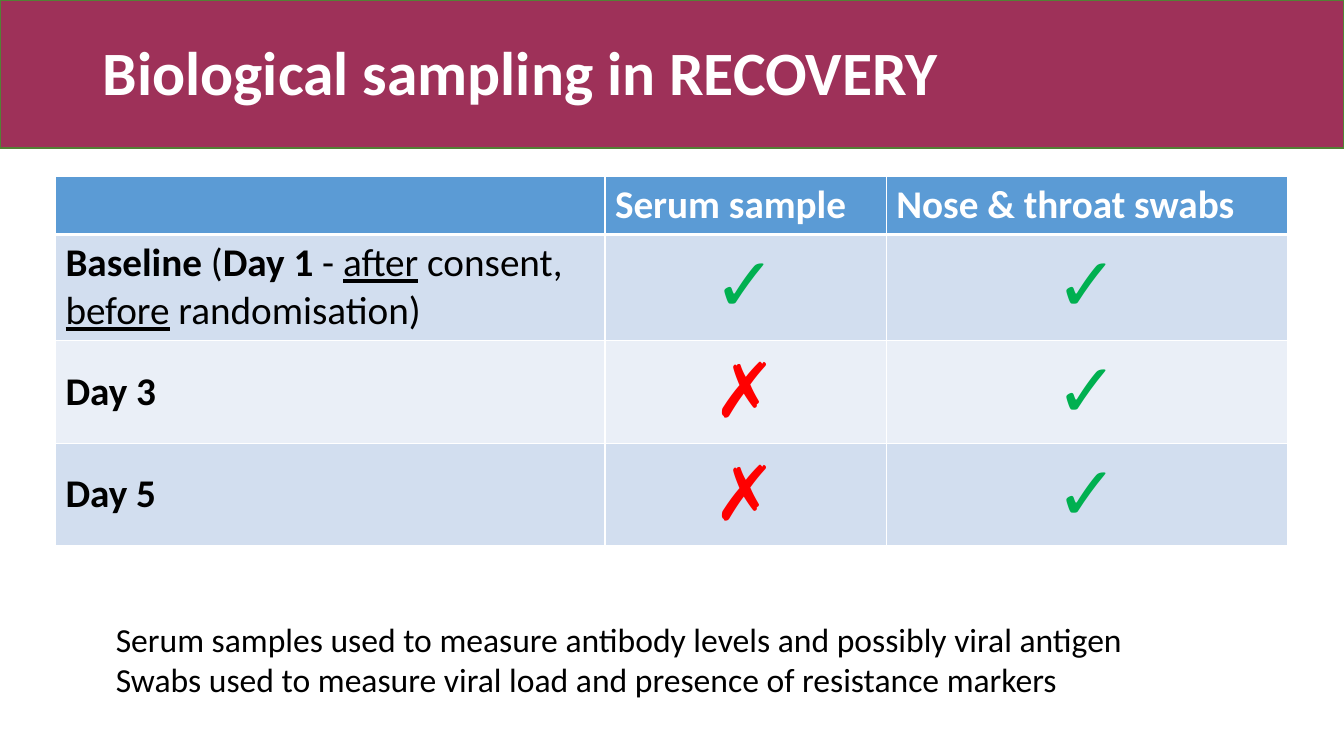
import pptx
import pptx.util
import pptx.dml.color
import pptx.enum.shapes
import pptx.enum.text
from lxml import etree
from pptx.oxml.ns import qn

Inches = pptx.util.Inches
Pt = pptx.util.Pt
ALIGN = pptx.enum.text.PP_ALIGN
MIDDLE = pptx.enum.text.MSO_ANCHOR.MIDDLE


def color(code):
    return pptx.dml.color.RGBColor.from_string(code)


class Deck:
    font = "Calibri"
    plum, green, white, black = "9E3159", "538035", "FFFFFF", "000000"
    head, bands = "5B9BD5", ("D2DEEF", "EAEFF7")

    def __init__(self):
        self.prs = pptx.Presentation()
        self.prs.slide_width = Inches(13.33)
        self.prs.slide_height = Inches(7.5)
        self.slide = self.prs.slides.add_slide(self.prs.slide_layouts[5])

    def place(self, shape, *box):
        for name, value in zip(("left", "top", "width", "height"), box):
            setattr(shape, name, Inches(value))

    def label(self, para, text, **style):
        run = para.add_run()
        run.text = text
        look = {"name": self.font, "bold": False, **style}
        run.font.color.rgb = color(look.pop("color", self.black))
        look["size"] = Pt(look["size"])
        for name, value in look.items():
            setattr(run.font, name, value)

    def banner(self, *box):
        shape = self.slide.shapes.add_shape(
            pptx.enum.shapes.MSO_SHAPE.RECTANGLE, *map(Inches, box))
        shape.shadow.inherit = False
        shape.fill.solid()
        shape.fill.fore_color.rgb = color(self.plum)
        shape.line.color.rgb = color(self.green)
        shape.line.width = Pt(1)
        # The title has to lie in front of the banner.
        self.slide.shapes.title._element.addprevious(shape._element)

    def title(self, text, *box):
        shape = self.slide.shapes.title
        self.place(shape, *box)
        frame = shape.text_frame
        frame.auto_size = pptx.enum.text.MSO_AUTO_SIZE.NONE
        frame.vertical_anchor = MIDDLE
        para = frame.paragraphs[0]
        para.alignment = ALIGN.LEFT
        para.line_spacing = 0.9
        self.label(para, text, size=44, bold=True, color=self.white)

    def edge(self, cell, widths):
        props = cell._tc.get_or_add_tcPr()
        for spot, (side, width) in enumerate(widths.items()):
            line = etree.Element(qn("a:ln" + side), w=str(Pt(width)))
            fill = etree.SubElement(line, qn("a:solidFill"))
            etree.SubElement(fill, qn("a:srgbClr"), val=self.white)
            props.insert(spot, line)

    def table(self, rows, cols, heights, left, top):
        grid = self.slide.shapes.add_table(
            len(rows), len(cols), Inches(left), Inches(top),
            Inches(sum(cols)), Inches(sum(heights))).table
        for col, width in zip(grid.columns, cols):
            col.width = Inches(width)
        for r, (row, height) in enumerate(zip(rows, heights)):
            grid.rows[r].height = Inches(height)
            for c, runs in enumerate(row):
                cell = grid.cell(r, c)
                cell.fill.solid()
                cell.fill.fore_color.rgb = color(
                    self.bands[(r - 1) % 2] if r else self.head)
                self.edge(cell, {"L": 1, "R": 1, "T": 3 if r == 1 else 1,
                                 "B": 1 if r else 3})
                para = cell.text_frame.paragraphs[0]
                if r and c:
                    para.alignment = ALIGN.CENTER
                elif r:
                    cell.vertical_anchor = MIDDLE
                for text, style in runs:
                    self.label(para, text, **style)

    def notes(self, lines, *box):
        frame = self.slide.shapes.add_textbox(*map(Inches, box)).text_frame
        frame.word_wrap = True
        for i, text in enumerate(lines):
            para = frame.add_paragraph() if i else frame.paragraphs[0]
            para.level = 1
            props = para._p.get_or_add_pPr()
            props.set("marL", str(Inches(0.5)))
            props.set("indent", "0")
            self.label(para, text, size=24)


def main():
    deck = Deck()
    deck.banner(0, 0, 13.33, 1.47)
    deck.title("Biological sampling in RECOVERY", 0.92, 0.02, 11.5, 1.45)

    plain = {"size": 28}
    bold = {**plain, "bold": True}
    under = {**plain, "underline": True}
    top = {**bold, "color": deck.white}
    yes = [("✓", {"size": 54, "color": "00B050"})]
    no = [("✗", {"size": 54, "color": "FF0000"})]
    start = [("Baseline", bold), (" (", plain), ("Day 1 ", bold),
             ("- ", plain), ("after", under), (" consent, ", plain),
             ("before", under), (" randomisation)", plain)]
    rows = [
        [[], [("Serum sample", top)], [("Nose & throat swabs", top)]],
        [start, yes, yes],
        [[("Day 3", bold)], no, yes],
        [[("Day 5", bold)], no, yes],
    ]
    deck.table(rows, (5.45, 2.79, 3.98), (0.57, 1.02, 1.02, 1.02), 0.55, 1.75)
    deck.notes([
        "Serum samples used to measure antibody levels and possibly viral antigen",
        "Swabs used to measure viral load and presence of resistance markers",
    ], 0.55, 6.09, 12.22, 0.91)
    deck.prs.save("out.pptx")


if __name__ == "__main__":
    main()
